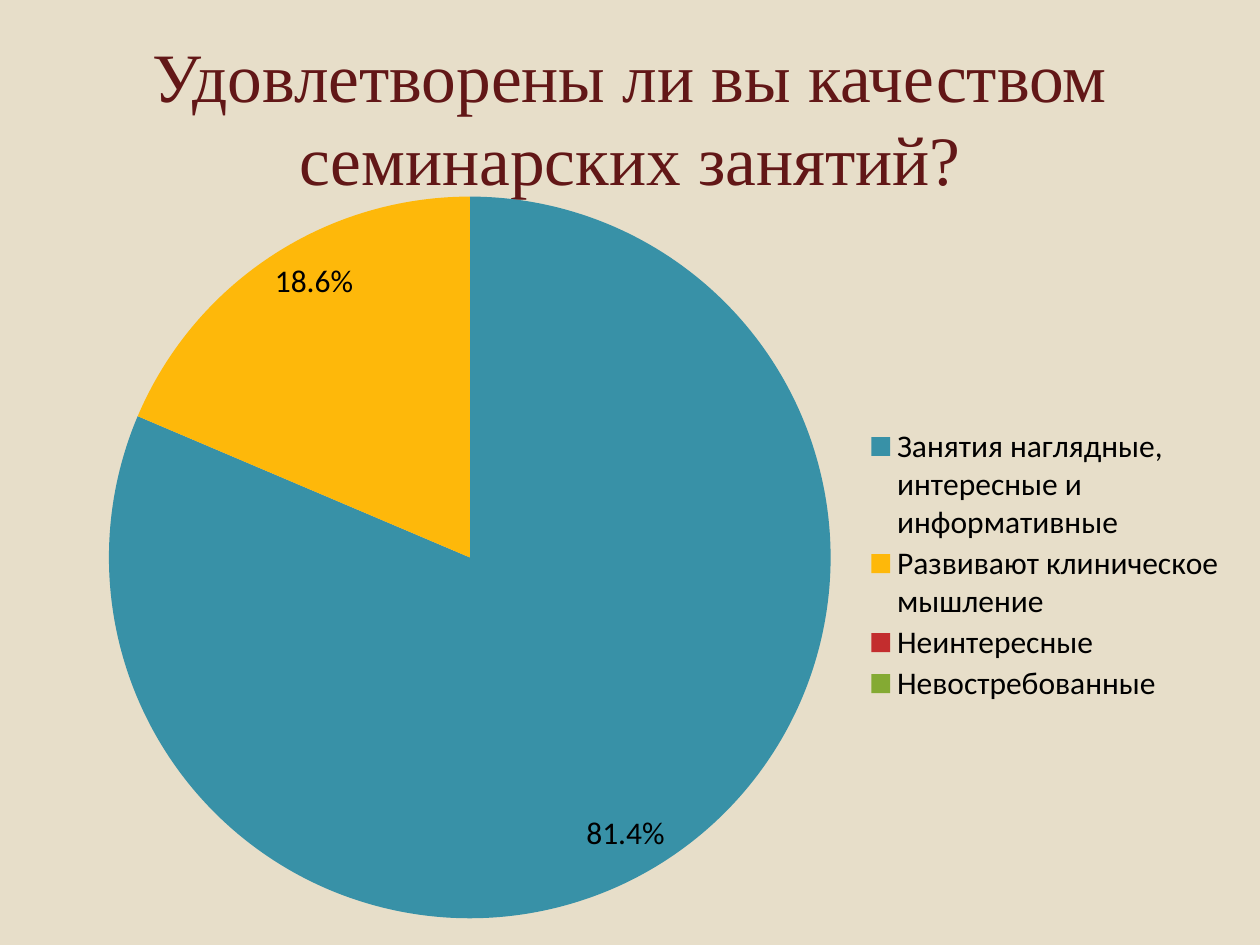
from lxml import etree
from pptx import Presentation
from pptx.chart.data import CategoryChartData
from pptx.dml.color import RGBColor
from pptx.enum import chart as ch, text
from pptx.oxml import parse_xml
from pptx.oxml.ns import nsdecls, qn
from pptx.util import Inches, Pt

TITLE = "Удовлетворены ли вы качеством семинарских занятий?"
BACKGROUND = RGBColor(0xE7, 0xDE, 0xC9)
TITLE_COLOR = RGBColor(0x62, 0x17, 0x17)
BLACK = RGBColor(0, 0, 0)
ANSWERS = [
    ("Занятия наглядные, интересные и информативные", 81.4, RGBColor(0x38, 0x91, 0xA7)),
    ("Развивают клиническое мышление", 18.6, RGBColor(0xFE, 0xB8, 0x0A)),
    ("Неинтересные", 0, RGBColor(0xC3, 0x2D, 0x2E)),
    ("Невостребованные", 0, RGBColor(0x84, 0xAA, 0x33)),
]
# Left, top, width, height as shares of the chart area
PIE_AREA = (0.02, 0.02, 0.63, 0.95)
LEGEND_AREA = (0.68, 0.32, 0.31, 0.37)


def manual_layout(area, inner=False):
    target = '<c:layoutTarget val="inner"/>' if inner else ""
    modes = '<c:xMode val="edge"/><c:yMode val="edge"/>'
    sizes = "".join(f'<c:{key} val="{share}"/>' for key, share in zip("xywh", area))
    return parse_xml(f'<c:layout {nsdecls("c")}><c:manualLayout>'
                     f"{target}{modes}{sizes}</c:manualLayout></c:layout>")


def set_layout(parent, layout, index):
    for old in parent.findall(qn("c:layout")):
        parent.remove(old)
    parent.insert(index, layout)


def add_title(slide):
    title = slide.shapes.add_textbox(Inches(0.5), Inches(0.3), Inches(9), Inches(1.25))
    frame = title.text_frame
    frame.word_wrap = True
    frame.vertical_anchor = text.MSO_ANCHOR.MIDDLE
    frame.text = TITLE
    paragraph = frame.paragraphs[0]
    paragraph.alignment = text.PP_ALIGN.CENTER
    font = paragraph.runs[0].font
    font.name, font.size = "Times New Roman", Pt(39.6)
    font.color.rgb = TITLE_COLOR


def add_pie(slide):
    data = CategoryChartData()
    data.categories = [answer for answer, _, _ in ANSWERS]
    data.add_series("Series 1", [share for _, share, _ in ANSWERS])
    chart = slide.shapes.add_chart(
        ch.XL_CHART_TYPE.PIE, Inches(0.67), Inches(1.44), Inches(9.13), Inches(6.03), data
    ).chart
    chart.has_title = False
    chart.font.name, chart.font.size = "Calibri", Pt(18)
    chart.font.color.rgb = BLACK

    chart.has_legend = True
    chart.legend.position = ch.XL_LEGEND_POSITION.RIGHT
    chart.legend.include_in_layout = False
    set_layout(chart.legend._element, manual_layout(LEGEND_AREA), 1)
    set_layout(chart.plots[0]._element.getparent(), manual_layout(PIE_AREA, inner=True), 0)

    series = chart.plots[0].series[0]
    labels = series.data_labels
    labels.show_percentage = True
    labels.show_value = False
    labels.number_format, labels.number_format_is_linked = "0.0%", False
    labels.position = ch.XL_LABEL_POSITION.INSIDE_END

    hidden = 0
    for index, (_, share, color) in enumerate(ANSWERS):
        fill = series.points[index].format.fill
        fill.solid()
        fill.fore_color.rgb = color
        if not share:  # empty slices carry no label
            label = etree.Element(qn("c:dLbl"))
            etree.SubElement(label, qn("c:idx")).set("val", str(index))
            etree.SubElement(label, qn("c:delete")).set("val", "1")
            labels._element.insert(hidden, label)
            hidden += 1


def main():
    deck = Presentation()
    deck.slide_width, deck.slide_height = Inches(10), Inches(7.5)
    slide = deck.slides.add_slide(deck.slide_layouts[6])
    slide.background.fill.solid()
    slide.background.fill.fore_color.rgb = BACKGROUND
    add_title(slide)
    add_pie(slide)
    deck.save("out.pptx")


if __name__ == "__main__":
    main()
